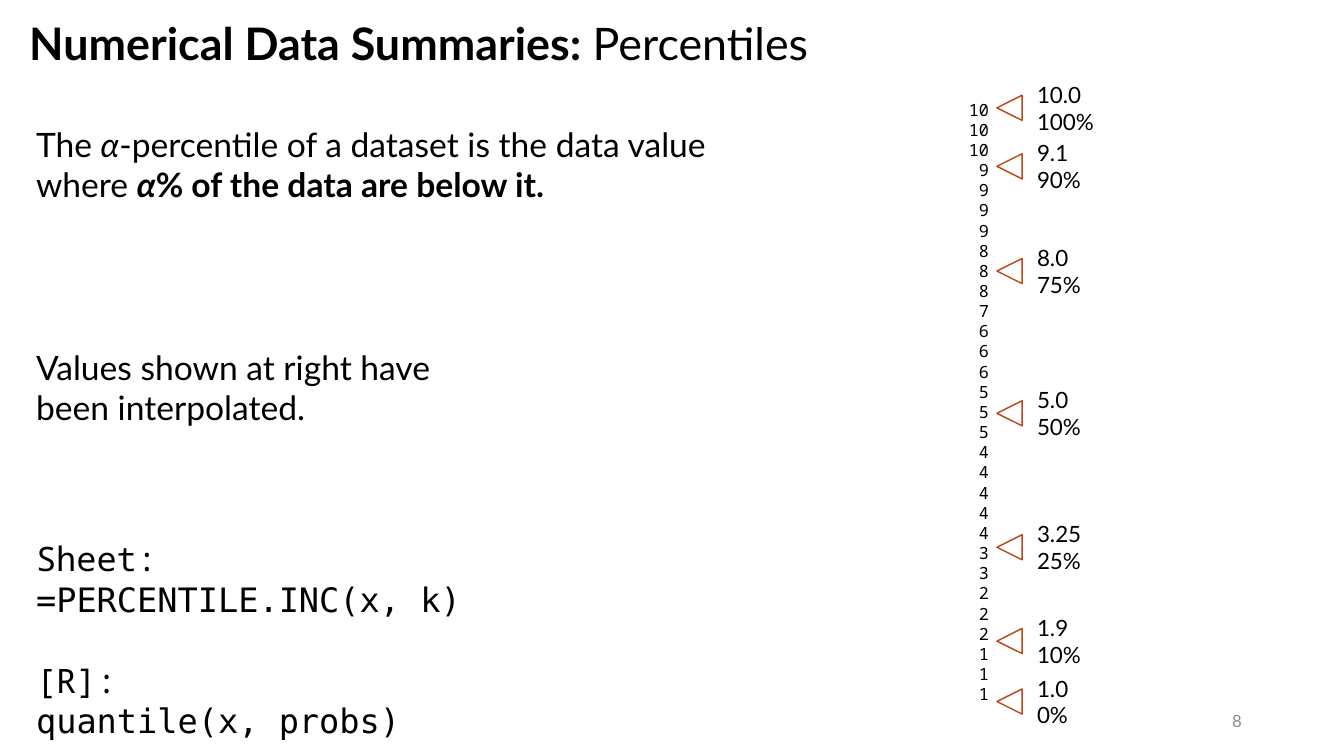
from pptx import Presentation
from pptx.dml.color import RGBColor
from pptx.enum.shapes import MSO_SHAPE
from pptx.enum.text import MSO_ANCHOR, PP_ALIGN
from pptx.util import Pt

COLORS = {"text": "000000", "number": "8C8C8C", "marker": "B74919"}
BODY_FONT, DATA_FONT, CODE_FONT = "Lato", "Noto Sans Mono", "DejaVu Sans Mono"

# Each paragraph is a list of (text, style) spans; style holds "b" and/or "i".
TITLE = [("Numerical Data Summaries: ", "b"), ("Percentiles", "")]
DEFINITION = [("The ", ""), ("α", "i"),
              ("-percentile of a dataset is the data value where ", ""),
              ("α", "bi"), ("% of the data are below it.", "b")]
NOTE = [("Values shown at right have been interpolated.", "")]
CODE = [("Sheet:", DATA_FONT), ("=PERCENTILE.INC(x, k)", CODE_FONT),
        ("[R]:", DATA_FONT), ("quantile(x, probs)", CODE_FONT)]
DATA = [10, 10, 10, 9, 9, 9, 9, 8, 8, 8, 7, 6, 6, 6, 5,
        5, 5, 4, 4, 4, 4, 4, 3, 3, 2, 2, 2, 1, 1, 1]
PERCENTILES = [  # label top, value, percentage
    (54, "10.0", "100%"), (95.8, "9.1", "90%"), (170.6, "8.0", "75%"),
    (272.2, "5.0", "50%"), (367.9, "3.25", "25%"), (434.9, "1.9", "10%"),
    (478.1, "1.0", "0%")]

TEXT_LEFT = 18.7
ROW_HEIGHT, COLUMN_WIDTH = 14.4, 15
TABLE_RIGHT, TABLE_TOP = 706.4, 72
MARKER_LEFT, MARKER_SIZE = 712.1, 18
LABEL_LEFT, LABEL_WIDTH, LABEL_HEIGHT = 733.7, 133.9, 46
CODE_LINE = 28.9


def add_spans(para, spans, size, font=BODY_FONT, color="text"):
    for text, style in spans:
        span = para.add_run()
        span.text = text
        span.font.name = font
        span.font.size = Pt(size)
        span.font.bold = "b" in style
        span.font.italic = "i" in style
        span.font.color.rgb = RGBColor.from_string(COLORS[color])


def add_box(page, left, top, width, height, anchor=MSO_ANCHOR.TOP):
    box = page.shapes.add_textbox(Pt(left), Pt(top), Pt(width), Pt(height))
    box.text_frame.word_wrap = True
    box.text_frame.vertical_anchor = anchor
    return box.text_frame


def add_title(page):
    title = page.shapes.title
    title.left, title.top, title.width, title.height = Pt(13.7), Pt(7.9), Pt(853.9), Pt(46)
    title.text_frame.vertical_anchor = MSO_ANCHOR.TOP
    para = title.text_frame.paragraphs[0]
    para.alignment = PP_ALIGN.LEFT
    add_spans(para, TITLE, 32)


def add_code(page):
    frame = add_box(page, TEXT_LEFT, 380.9, 324, 152.6)
    for index, (line, font) in enumerate(CODE):
        para = frame.paragraphs[0] if index == 0 else frame.add_paragraph()
        para.line_spacing = Pt(CODE_LINE)
        if index == 2:
            para.space_before = Pt(CODE_LINE)
        add_spans(para, [(line, "")], 24, font)


def add_data(page):
    table = page.shapes.add_table(
        len(DATA), 1, Pt(TABLE_RIGHT - COLUMN_WIDTH), Pt(TABLE_TOP),
        Pt(COLUMN_WIDTH), Pt(ROW_HEIGHT * len(DATA))).table
    table.first_row = table.horz_banding = False
    for row, value in zip(table.rows, DATA):
        row.height = Pt(ROW_HEIGHT)
        cell = row.cells[0]
        cell.fill.background()
        cell.vertical_anchor = MSO_ANCHOR.BOTTOM
        cell.margin_left = cell.margin_right = cell.margin_top = cell.margin_bottom = 0
        para = cell.text_frame.paragraphs[0]
        para.alignment = PP_ALIGN.RIGHT
        para.line_spacing = Pt(14)
        add_spans(para, [(str(value), "")], 12, DATA_FONT)


def add_percentile(page, top, value, percentage):
    frame = add_box(page, LABEL_LEFT, top, LABEL_WIDTH, LABEL_HEIGHT, MSO_ANCHOR.MIDDLE)
    add_spans(frame.paragraphs[0], [(value, "")], 16)
    add_spans(frame.add_paragraph(), [(percentage, "")], 16)
    marker = page.shapes.add_shape(
        MSO_SHAPE.ISOSCELES_TRIANGLE, Pt(MARKER_LEFT),
        Pt(top + (LABEL_HEIGHT - MARKER_SIZE) / 2), Pt(MARKER_SIZE), Pt(MARKER_SIZE))
    marker.rotation = 270
    marker.shadow.inherit = False
    marker.fill.background()
    marker.line.color.rgb = RGBColor.from_string(COLORS["marker"])
    marker.line.width = Pt(1)


def main():
    deck = Presentation()
    deck.slide_width, deck.slide_height = Pt(960), Pt(540)
    page = deck.slides.add_slide(deck.slide_layouts[5])
    add_title(page)
    add_spans(add_box(page, TEXT_LEFT, 85, 504, 123.8).paragraphs[0], DEFINITION, 24)
    add_spans(add_box(page, TEXT_LEFT, 244.1, 324, 65.5).paragraphs[0], NOTE, 24)
    add_code(page)
    add_data(page)
    for percentile in PERCENTILES:
        add_percentile(page, *percentile)
    number = add_box(page, 678.2, 500.4, 216, 28.8, MSO_ANCHOR.MIDDLE).paragraphs[0]
    number.alignment = PP_ALIGN.RIGHT
    add_spans(number, [("8", "")], 12, color="number")
    deck.save("out.pptx")


if __name__ == "__main__":
    main()
